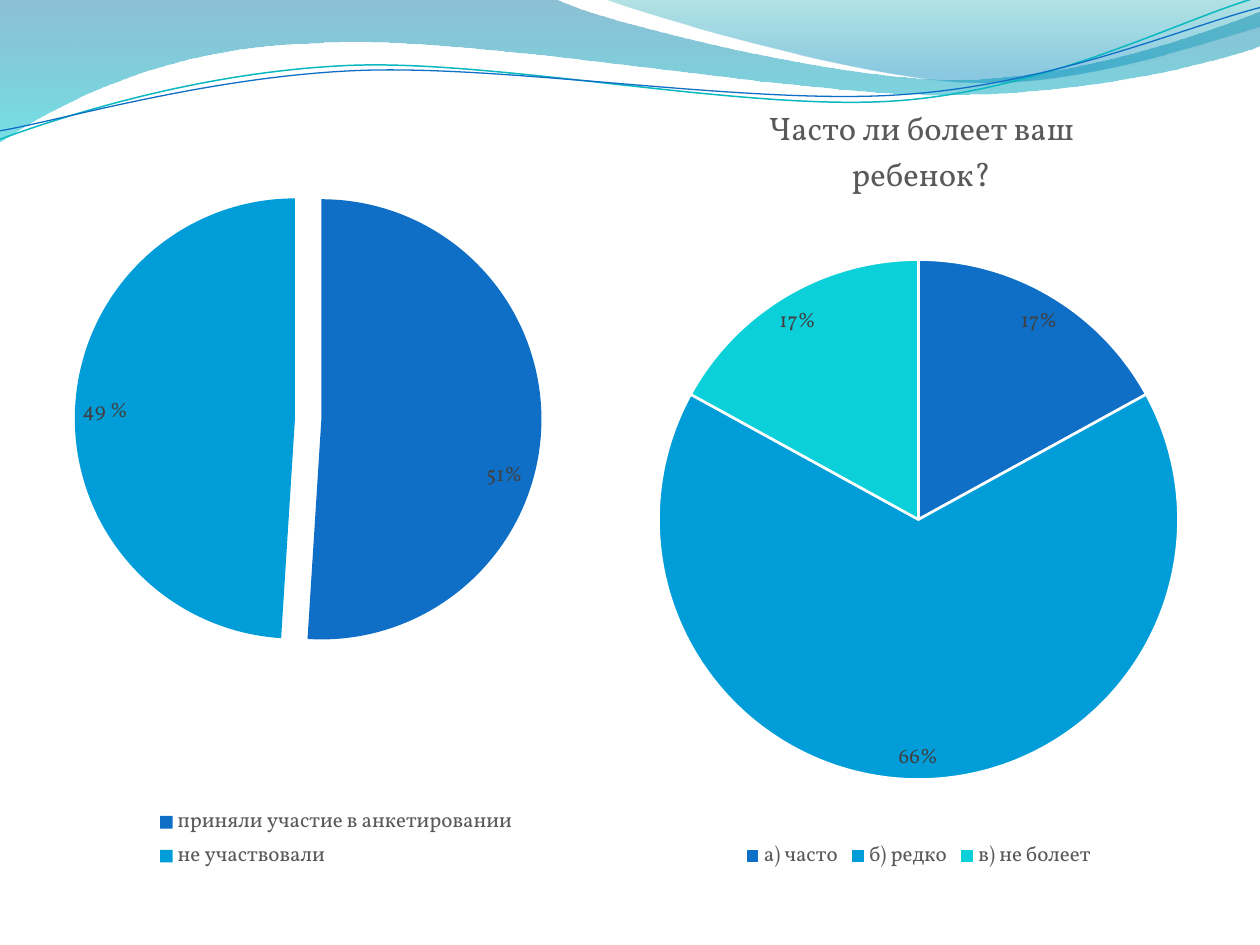
from dataclasses import dataclass
from math import cos, radians, sin

from lxml import etree
from pptx import Presentation
from pptx.chart.data import CategoryChartData
from pptx.dml.color import RGBColor
from pptx.enum.chart import XL_CHART_TYPE, XL_LABEL_POSITION, XL_LEGEND_POSITION
from pptx.oxml.ns import qn
from pptx.util import Pt

PIE = XL_CHART_TYPE.PIE
BOTTOM = XL_LEGEND_POSITION.BOTTOM
EDGE = XL_LABEL_POSITION.INSIDE_END
BEST = XL_LABEL_POSITION.BEST_FIT
SCALE = 9144  # EMU per px, 100 px to the inch


@dataclass(frozen=True)
class Theme:
    font: str = "Vollkorn"
    slices: tuple = ("0F6FC6", "009DD9", "0BD0D9")
    white: str = "FFFFFF"
    black: str = "000000"
    text: str = "595959"
    label: str = "404040"
    teal: str = "0AB8BF"
    blue: str = "0F6FC6"
    base: int = 10
    small: int = 12
    large: float = 18.6


def spin(dots, mid, angle):
    """Turn points clockwise about a middle."""
    c, s = cos(radians(angle)), sin(radians(angle))
    moves = [(x - mid[0], y - mid[1]) for x, y in dots]
    return [(mid[0] + x * c - y * s, mid[1] + x * s + y * c) for x, y in moves]


def place(node, shift=False, **spots):
    """Give a chart part a manual layout in shares of the chart."""
    for old in node.findall(qn("c:layout")):
        node.remove(old)
    layout = etree.Element(qn("c:layout"))
    manual = etree.SubElement(layout, qn("c:manualLayout"))
    if "w" in spots:
        etree.SubElement(manual, qn("c:layoutTarget")).set("val", "inner")
    if not shift:
        for key in ("x", "y"):
            etree.SubElement(manual, qn(f"c:{key}Mode")).set("val", "edge")
    for key, val in spots.items():
        etree.SubElement(manual, qn(f"c:{key}")).set("val", str(val))
    first = node.find(qn("c:idx" if shift else "c:tx"))
    node.insert(0 if first is None else 1, layout)


class Deck:
    def __init__(self, theme, wide, high):
        self.theme = theme
        self.prs = Presentation()
        self.prs.slide_width, self.prs.slide_height = wide * SCALE, high * SCALE
        self.slide = self.prs.slides.add_slide(self.prs.slide_layouts[6])

    def style(self, font, size, color):
        font.name, font.size = self.theme.font, Pt(size)
        font.bold = False
        font.color.rgb = RGBColor.from_string(color)

    def outline(self, start, parts, close, mid=(0, 0), turn=0):
        """Draw a path; a part of two numbers is a line, of six a curve."""
        dots = [start]
        for part in parts:
            dots += zip(part[::2], part[1::2])
        dots = [(x * SCALE, y * SCALE) for x, y in spin(dots, mid, turn)]
        pen = self.slide.shapes.build_freeform(*dots[0], scale=1.0)
        pen.add_line_segments(dots[1:], close=close)
        shape = pen.convert_to_shape()
        shape.shadow.inherit = False
        lines = iter(list(shape._element.iter(qn("a:lnTo"))))
        for part in parts:
            line = next(lines)
            if len(part) == 6:
                curve = etree.Element(qn("a:cubicBezTo"))
                line.addprevious(curve)
                for node in (line, next(lines), next(lines)):
                    curve.append(node[0])
                    node.getparent().remove(node)
        return shape

    def wave(self, start, parts, stops):
        shape = self.outline(start, parts, True)
        shape.line.fill.background()
        shape.fill.gradient()
        shape.fill.gradient_angle = 270
        for stop, (spot, color, alpha) in zip(shape.fill.gradient_stops, stops):
            stop.position = spot / 100
            stop.color.rgb = RGBColor.from_string(color)
        tints = shape._element.spPr.iter(qn("a:srgbClr"))
        for tint, (spot, color, alpha) in zip(tints, stops):
            etree.SubElement(tint, qn("a:alpha")).set("val", str(alpha * 1000))

    def thread(self, start, parts, mid, color, width, tilt=-2.7):
        shape = self.outline(start, parts, False, mid, -tilt)
        shape.rotation = tilt
        shape.fill.background()
        shape.line.color.rgb = RGBColor.from_string(color)
        shape.line.width = Pt(width)

    def pie(self, box, cats, vals, plot, title=None, burst=0, notes=(), spot=BEST):
        theme = self.theme
        data = CategoryChartData()
        data.categories = cats
        data.add_series("Series 1", vals)
        box = [n * SCALE for n in box]
        chart = self.slide.shapes.add_chart(PIE, *box, data).chart
        self.style(chart.font, theme.base, theme.black)
        place(chart._chartSpace.chart.plotArea, **plot)

        # Title and legend
        chart.has_title = title is not None
        if title:
            run = chart.chart_title.text_frame.paragraphs[0].add_run()
            run.text = title
            self.style(run.font, theme.large, theme.text)
            place(chart.chart_title._element, x=0.22, y=0.03)
        chart.has_legend = True
        chart.legend.position = BOTTOM
        chart.legend.include_in_layout = False
        self.style(chart.legend.font, theme.small, theme.text)

        # Slices
        group = chart.plots[0]
        group.vary_by_categories = True
        series = group.series[0]
        for i in range(len(vals)):
            look = series.points[i].format
            look.fill.solid()
            look.fill.fore_color.rgb = RGBColor.from_string(theme.slices[i])
            if burst:
                look.line.fill.background()
            else:
                look.line.color.rgb = RGBColor.from_string(theme.white)
                look.line.width = Pt(1.5)
        if burst:
            for point in series._element.findall(qn("c:dPt")):
                node = etree.Element(qn("c:explosion"))
                node.set("val", str(burst))
                point.find(qn("c:spPr")).addprevious(node)

        # Labels
        labels = series.data_labels
        labels.show_percentage, labels.show_value = True, False
        labels.number_format, labels.number_format_is_linked = "0%", False
        labels.position = spot
        self.style(labels.font, theme.small, theme.label)
        for i, (note, shift) in enumerate(notes):
            label = series.points[i].data_label
            run = label.text_frame.paragraphs[0].add_run()
            run.text = note
            self.style(run.font, theme.small, theme.label)
            label.position = spot
            if shift:
                node = series._element.findall(".//" + qn("c:dLbl"))[i]
                place(node, True, x=shift[0], y=shift[1])


def main():
    theme = Theme()
    deck = Deck(theme, 1000, 750)

    # Waves along the top
    deck.wave((-1, -1), [
        (440, -1), (476, 17, 664, 63, 758, 63), (853, 63, 958, 26, 1000, 9),
        (1001, 36), (983, 44, 870, 76, 746, 75), (622, 75, 382, 28, 257, 34),
        (129, 36, 46, 83, -1, 113),
    ], [(0, "0074A1", 45), (100, "00C6CF", 55)])
    deck.wave((479, -1), [
        (509, 11, 682, 62, 769, 65), (856, 69, 961, 32, 1000, 21), (1000, -1),
    ], [(0, "00A1A9", 30), (80, "008BBF", 45)])

    # Thin lines under the waves
    deck.thread((-1, 111), [
        (48, 93, 158, 57, 277, 52), (395, 47, 593, 89, 713, 80),
        (833, 71, 938, 15, 998, -2),
    ], (499, 57), theme.teal, 0.85)
    deck.thread((-1, 104), [
        (47, 96, 164, 61, 283, 56), (403, 51, 597, 84, 717, 75),
        (836, 67, 941, 21, 1000, 6),
    ], (499, 59), theme.blue, 0.75)

    # Survey charts
    deck.pie((43, 36, 448, 659), ["приняли участие в анкетировании", "не участвовали"],
             [51, 49], dict(x=0.06, y=0.18, w=0.78, h=0.54), burst=6,
             notes=(("51%", (-0.02, 0.06)), ("49 %", None)), spot=EDGE)
    deck.pie((508, 60, 442, 635), ["а) часто", "б) редко", "в) не болеет"],
             [17, 66, 17], dict(x=0.03, y=0.23, w=0.94, h=0.65),
             title="Часто ли болеет ваш ребенок?")
    deck.prs.save("out.pptx")


if __name__ == "__main__":
    main()
